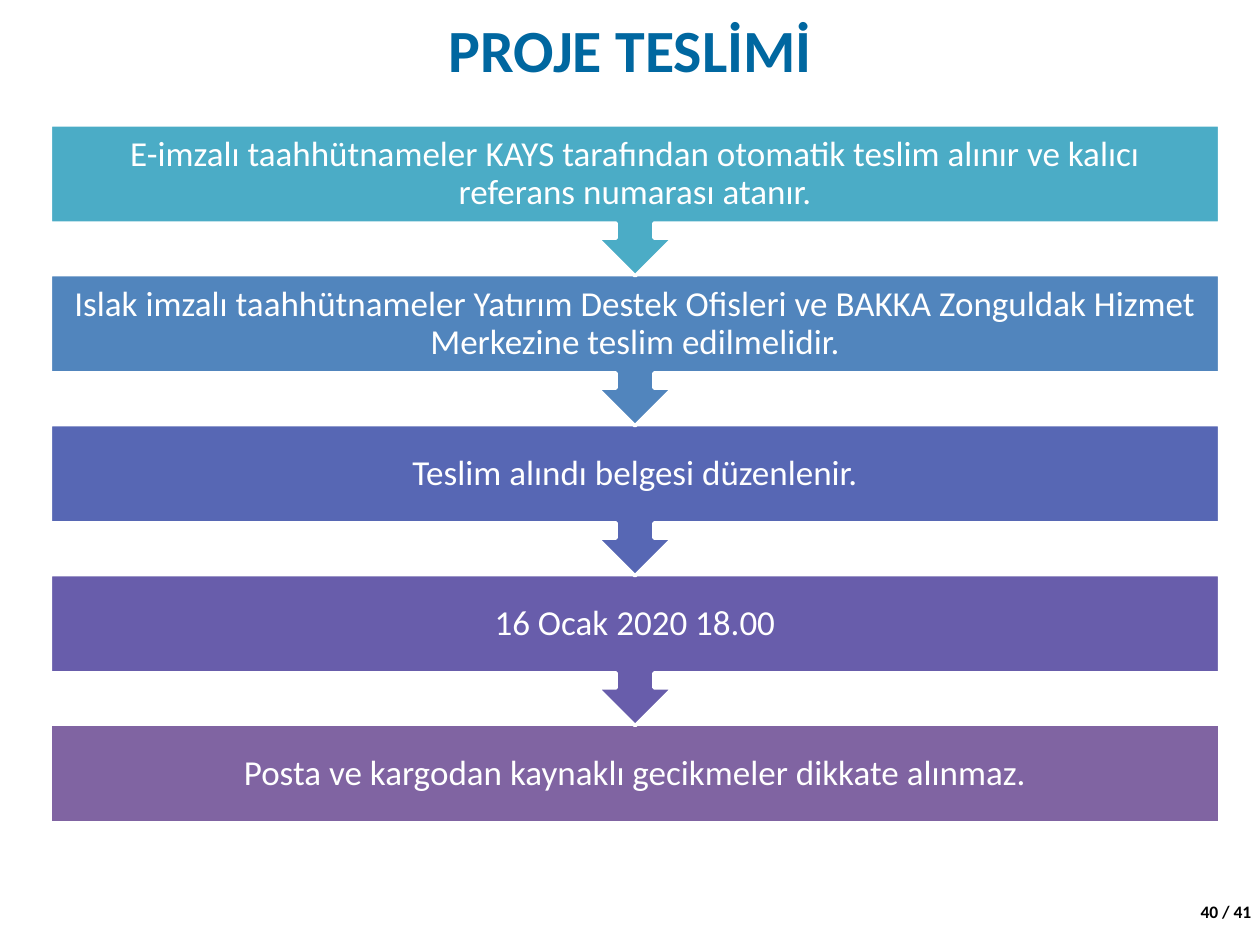
from pptx import Presentation
from pptx.dml.color import RGBColor
from pptx.enum.shapes import MSO_SHAPE
from pptx.enum.text import MSO_ANCHOR, PP_ALIGN
from pptx.util import Inches, Pt

WHITE = RGBColor(0xFF, 0xFF, 0xFF)
BLACK = RGBColor(0, 0, 0)
TITLE_BLUE = RGBColor(0x00, 0x67, 0xA0)

TITLE = "PROJE TESLİMİ"
PAGE = "40 / 41"
STEPS = [
    ("E-imzalı taahhütnameler KAYS tarafından otomatik teslim alınır ve kalıcı "
     "referans numarası atanır.", RGBColor(0x4B, 0xAC, 0xC6)),
    ("Islak imzalı taahhütnameler Yatırım Destek Ofisleri ve BAKKA Zonguldak "
     "Hizmet Merkezine teslim edilmelidir.", RGBColor(0x51, 0x85, 0xBD)),
    ("Teslim alındı belgesi düzenlenir.", RGBColor(0x57, 0x67, 0xB4)),
    ("16 Ocak 2020 18.00", RGBColor(0x68, 0x5D, 0xAB)),
    ("Posta ve kargodan kaynaklı gecikmeler dikkate alınmaz.",
     RGBColor(0x80, 0x64, 0xA2)),
]

LEFT, TOP, WIDTH = 0.4, 0.99, 9.28
BAR_HEIGHT, CALLOUT_HEIGHT, PITCH = 0.78, 1.2, 1.19


def add_text(slide, content, left, top, width, height, *, size, color,
             bold=False, align=PP_ALIGN.CENTER, anchor=MSO_ANCHOR.MIDDLE,
             inset=(0.1, 0.05), spacing=None, wrap=True):
    box = slide.shapes.add_textbox(
        Inches(left), Inches(top), Inches(width), Inches(height))
    frame = box.text_frame
    frame.word_wrap = wrap
    frame.vertical_anchor = anchor
    frame.margin_left = frame.margin_right = Inches(inset[0])
    frame.margin_top = frame.margin_bottom = Inches(inset[1])
    paragraph = frame.paragraphs[0]
    paragraph.alignment = align
    paragraph.line_spacing = spacing
    run = paragraph.add_run()
    run.text = content
    run.font.name = "Calibri"
    run.font.size = Pt(size)
    run.font.bold = bold
    run.font.color.rgb = color


def add_step(slide, preset, top, height, color, rotation):
    step = slide.shapes.add_shape(
        preset, Inches(LEFT), Inches(top), Inches(WIDTH), Inches(height))
    step.rotation = rotation
    step.shadow.inherit = False
    step.fill.solid()
    step.fill.fore_color.rgb = color
    step.line.color.rgb = WHITE
    step.line.width = Pt(2)


def main():
    deck = Presentation()
    deck.slide_width, deck.slide_height = Inches(10), Inches(7.5)
    slide = deck.slides.add_slide(deck.slide_layouts[6])

    add_text(slide, PAGE, 9.43, 7.1, 0.68, 0.3, size=10, color=BLACK, bold=True,
             align=PP_ALIGN.LEFT, anchor=MSO_ANCHOR.TOP, wrap=False)
    add_text(slide, TITLE, 0.5, 0.07, 9, 0.63, size=34.2, color=TITLE_BLUE,
             bold=True)

    last = len(STEPS) - 1
    for index, (label, color) in reversed(list(enumerate(STEPS))):
        top = TOP + index * PITCH
        if index == last:
            add_step(slide, MSO_SHAPE.RECTANGLE, top, BAR_HEIGHT, color, 0)
        else:
            add_step(slide, MSO_SHAPE.UP_ARROW_CALLOUT, top, CALLOUT_HEIGHT,
                     color, 180)
        add_text(slide, label, LEFT, top, WIDTH, BAR_HEIGHT, size=20,
                 color=WHITE, inset=(0.16, 0.16), spacing=0.9)

    deck.save("out.pptx")


if __name__ == "__main__":
    main()
